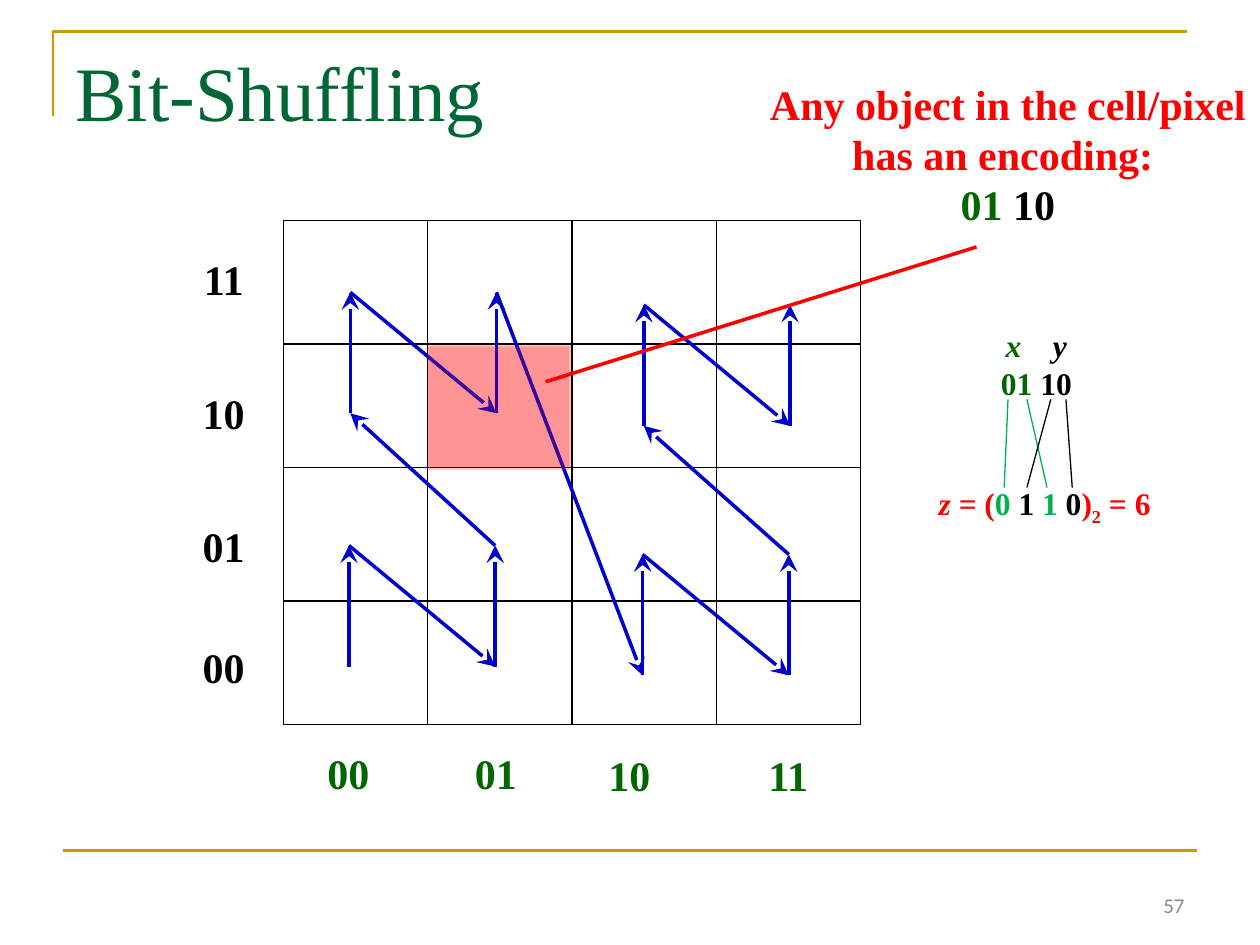
from dataclasses import dataclass

from lxml.etree import SubElement
from pptx import Presentation
from pptx.dml.color import RGBColor
from pptx.enum.shapes import MSO_CONNECTOR, MSO_SHAPE
from pptx.enum.text import MSO_ANCHOR, PP_ALIGN
from pptx.oxml.ns import qn
from pptx.util import Inches, Pt


@dataclass(frozen=True)
class Theme:
    serif: str = "Times New Roman"
    sans: str = "Calibri"
    title_size: int = 44
    label_size: int = 24
    formula_size: int = 18
    number_size: int = 12
    title: str = "006633"
    gold: str = "CC9900"
    x_green: str = "006600"
    bit_green: str = "00B050"
    black: str = "000000"
    red: str = "FF0000"
    blue: str = "0000CC"
    pink: str = "FFBDBD"
    gray: str = "898989"


THEME = Theme()


def rgb(color):
    return RGBColor.from_string(color)


def style_font(font, size, name=THEME.serif, bold=True):
    font.size, font.name, font.bold = Pt(size), name, bold


def add_text(page, place, paragraphs, size, align=PP_ALIGN.LEFT, wrap=True,
             name=THEME.serif, bold=True, anchor=MSO_ANCHOR.TOP):
    """Add a text box; each paragraph is a list of (text, colour, italic, attributes) spans,
    of which the last two may be left out."""
    box = page.shapes.add_textbox(*map(Inches, place))
    frame = box.text_frame
    frame.word_wrap = wrap
    frame.vertical_anchor = anchor
    for index, spans in enumerate(paragraphs):
        para = frame.add_paragraph() if index else frame.paragraphs[0]
        para.alignment = align
        style_font(para.font, size, name, bold)
        for text, color, *extras in spans:
            span = para.add_run()
            span.text = text
            span.font.color.rgb = rgb(color)
            if extras:
                span.font.italic = extras[0]
            if len(extras) > 1:
                for key, value in extras[1].items():
                    span._r.get_or_add_rPr().set(key, value)


def add_line(page, start, end, color, width, arrow=False):
    line = page.shapes.add_connector(
        MSO_CONNECTOR.STRAIGHT, *map(Inches, (*start, *end)))
    line.line.color.rgb = rgb(color)
    line.line.width = Pt(width)
    if arrow:
        SubElement(line.line._get_or_add_ln(), qn("a:tailEnd"),
                   type="stealth", w="lg", len="lg")
    SubElement(line._element.spPr, qn("a:effectLst"))


def add_frame(page):
    left, top = 0.42, 0.25
    builder = page.shapes.build_freeform(Inches(left), Inches(0.92))
    corners = [(left, top), (9.42, top)]
    builder.add_line_segments(
        [(Inches(x), Inches(y)) for x, y in corners], close=False)
    frame = builder.convert_to_shape()
    frame.shadow.inherit = False
    frame.fill.background()
    frame.line.color.rgb = rgb(THEME.gold)
    frame.line.width = Pt(1.5)
    add_line(page, (0.5, 6.75), (9.5, 6.75), THEME.gold, 1.5)


def add_title(page, text):
    title = page.shapes.title
    title.left, title.top, title.width, title.height = map(Inches, (0.5, 0.3, 9, 1.25))
    title.text_frame.text = text
    title.text_frame.vertical_anchor = MSO_ANCHOR.TOP
    para = title.text_frame.paragraphs[0]
    para.alignment = PP_ALIGN.LEFT
    style_font(para.font, THEME.title_size, bold=False)
    para.font.color.rgb = rgb(THEME.title)


def border_cell(cell):
    properties = cell._tc.get_or_add_tcPr()
    for side in ("lnL", "lnR", "lnT", "lnB"):
        line = SubElement(properties, qn(f"a:{side}"), w=str(Pt(1)))
        fill = SubElement(line, qn("a:solidFill"))
        SubElement(fill, qn("a:srgbClr"), val=THEME.black)


def add_grid(page):
    heights = (0.98, 0.98, 1.06, 0.98)
    place = map(Inches, (2.25, 1.75, 4.58, 4))
    table = page.shapes.add_table(4, 4, *place).table
    table.first_row = table.horz_banding = False
    for row, height in zip(table.rows, heights):
        row.height = Inches(height)
    for cell in table.iter_cells():
        border_cell(cell)
        cell.fill.background()
    marked = table.cell(1, 1)
    marked.fill.solid()
    marked.fill.fore_color.rgb = rgb(THEME.pink)


def add_axis_labels(page):
    columns = [("00", 2.5, 5.88), ("01", 3.67, 5.88), ("10", 4.73, 5.9), ("11", 6, 5.9)]
    rows = [("00", 1.51, 5.04), ("01", 1.51, 4.08), ("10", 1.51, 3.03), ("11", 1.52, 1.96)]
    for labels, color in ((columns, THEME.x_green), (rows, THEME.black)):
        for text, left, top in labels:
            add_text(page, (left, top, 0.54, 0.5), [[(text, color)]],
                     THEME.label_size, wrap=False)


def add_z_curve(page):
    """Join the cell centres, quadrant by quadrant, in z-order."""
    quadrants = [(2.77, 5.29), (2.78, 3.28), (5.1, 5.36), (5.11, 3.38)]
    steps = [(0, 0), (0, -0.96), (1.16, 0), (1.16, -0.96)]
    points = [(x + dx, y + dy) for x, y in quadrants for dx, dy in steps]
    for start, end in zip(points, points[1:]):
        add_line(page, start, end, THEME.blue, 2, arrow=True)


def add_highlight(page):
    add_line(page, (4.33, 3.03), (7.75, 1.96), THEME.red, 2)
    shade = page.shapes.add_shape(
        MSO_SHAPE.RECTANGLE, *map(Inches, (3.4, 2.75, 1.12, 0.98)))
    shade.shadow.inherit = False
    shade.line.fill.background()
    shade.fill.solid()
    shade.fill.fore_color.rgb = rgb(THEME.red)
    color = shade._element.spPr.find(f"{qn('a:solidFill')}/{qn('a:srgbClr')}")
    SubElement(color, qn("a:alpha"), val="21000")
    add_text(page, (6, 0.57, 4, 1.31),
             [[("Any object in the cell/pixel has an encoding: ", THEME.red)],
              [("01 ", THEME.x_green), ("10", THEME.black)]],
             THEME.label_size, PP_ALIGN.CENTER)


def add_formula(page):
    green, black, red = THEME.bit_green, THEME.black, THEME.red
    add_text(page, (7.35, 3.79, 1.98, 0.4),
             [[("z = ", red, True), ("(", red), ("0 ", green), ("1 ", black),
               ("1 ", green), ("0", black), (")", red),
               ("2", red, False, {"baseline": "-25000"}), (" = 6", red)]],
             THEME.formula_size)
    wide_space = (" ", THEME.x_green, True, {"spc": "1350"})
    add_text(page, (7.84, 2.54, 0.77, 0.71),
             [[("x", THEME.x_green, True), wide_space, ("y", black, True)],
              [("01 ", THEME.x_green), ("10", black)]],
             THEME.formula_size, PP_ALIGN.CENTER, wrap=False)
    for upper, lower, color in ((8, 7.97, green), (8.15, 8.31, green),
                                (8.34, 8.15, black), (8.46, 8.51, black)):
        add_line(page, (upper, 3.17), (lower, 3.87), color, 0.75)


def main():
    deck = Presentation()
    deck.slide_width, deck.slide_height = Inches(10), Inches(7.5)
    page = deck.slides.add_slide(deck.slide_layouts[5])
    add_frame(page)
    add_title(page, "Bit-Shuffling")
    add_text(page, (7.17, 6.83, 2.33, 0.5), [[("57", THEME.gray)]], THEME.number_size,
             PP_ALIGN.RIGHT, name=THEME.sans, bold=False, anchor=MSO_ANCHOR.BOTTOM)
    add_grid(page)
    add_axis_labels(page)
    add_z_curve(page)
    add_highlight(page)
    add_formula(page)
    deck.save("out.pptx")


if __name__ == "__main__":
    main()
